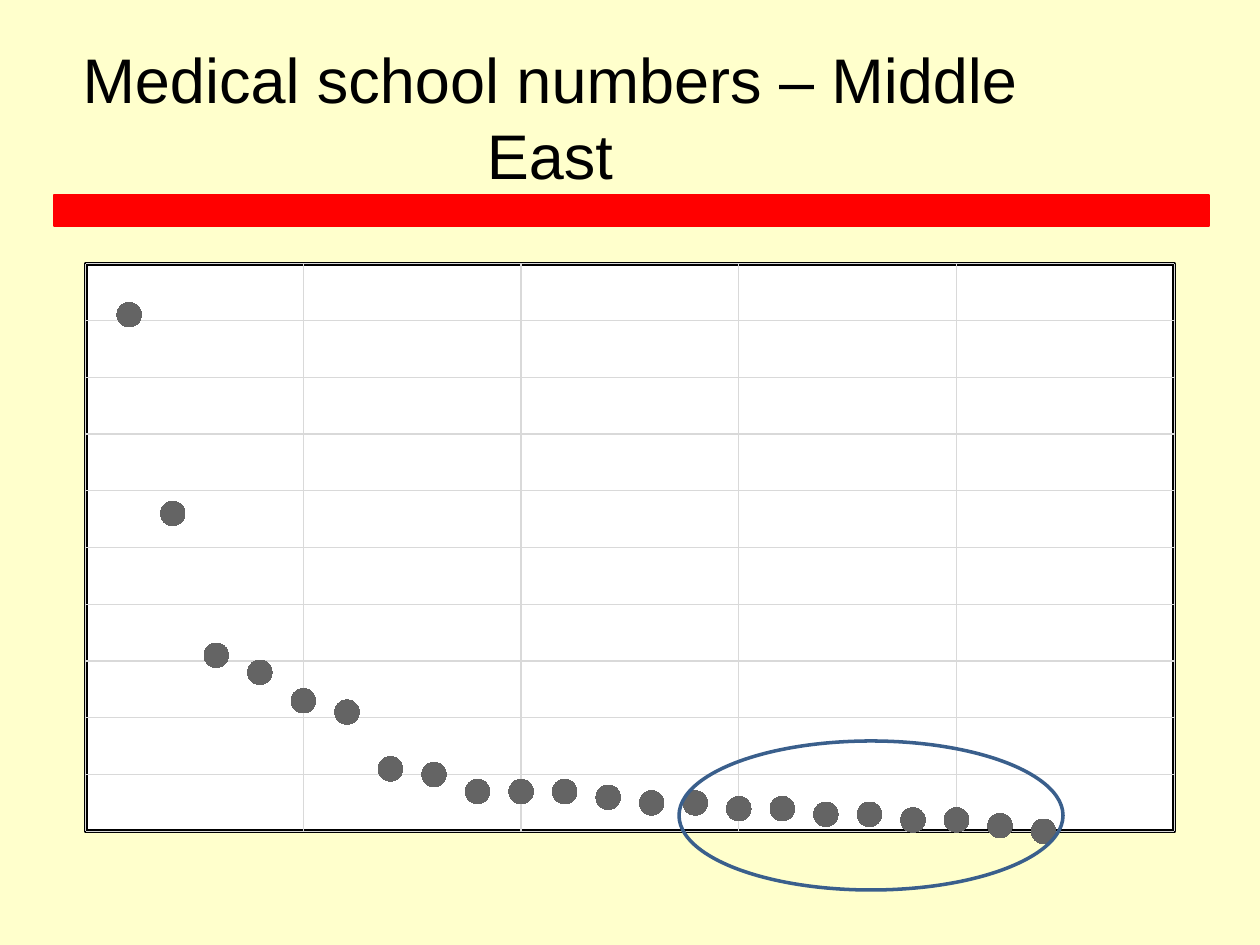
import pptx
import pptx.chart.data
import pptx.dml.color
import pptx.enum.chart
import pptx.enum.shapes
import pptx.enum.text
import pptx.oxml
import pptx.oxml.ns
import pptx.util

PX = 914400 / 126
COLORS = {
    "background": "FFFFCC",
    "rule": "FF0000",
    "text": "000000",
    "plot": "FFFFFF",
    "grid": "D9D9D9",
    "marker": "646464",
    "highlight": "3A5F8C",
}
SCHOOL_COUNTS = [91, 56, 31, 28, 23, 21, 11, 10, 7, 7, 7,
                 6, 5, 5, 4, 4, 3, 3, 2, 2, 1, 0]


def color(name):
    return pptx.dml.color.RGBColor.from_string(COLORS[name])


def px(*lengths):
    return [pptx.util.Emu(round(length * PX)) for length in lengths]


class SlideBuilder:
    """Holds the style and the current slide."""

    title_font = "Arial"
    chart_font = "Calibri"

    def __init__(self, page):
        self.page = page
        page.background.fill.solid()
        page.background.fill.fore_color.rgb = color("background")

    def title(self, text, *place):
        box = self.page.shapes.title
        box.left, box.top, box.width, box.height = px(*place)
        frame = box.text_frame
        frame.text = text
        frame.word_wrap = True
        frame.vertical_anchor = pptx.enum.text.MSO_ANCHOR.MIDDLE
        para = frame.paragraphs[0]
        para.alignment = pptx.enum.text.PP_ALIGN.CENTER
        para.font.name = self.title_font
        para.font.size = pptx.util.Pt(36)
        para.font.color.rgb = color("text")

    def shape(self, kind, line, width, *place, fill=None):
        shape = self.page.shapes.add_shape(kind, *px(*place))
        shape.shadow.inherit = False
        if fill:
            shape.fill.solid()
            shape.fill.fore_color.rgb = color(fill)
        else:
            shape.fill.background()
        shape.line.color.rgb = color(line)
        shape.line.width = pptx.util.Pt(width)

    def scatter(self, name, values, *place):
        data = pptx.chart.data.XyChartData()
        points = data.add_series(name)
        for rank, value in enumerate(values, start=1):
            points.add_data_point(rank, value)
        chart = self.page.shapes.add_chart(
            pptx.enum.chart.XL_CHART_TYPE.XY_SCATTER, *px(*place), data).chart
        chart.has_legend = False
        chart.has_title = False
        chart.font.name = self.chart_font
        chart.font.size = pptx.util.Pt(10)
        chart.font.color.rgb = color("text")
        self.hidden_axis(chart.category_axis, 25, 5)
        self.hidden_axis(chart.value_axis, 100, 10)
        chart.plots[0].vary_by_categories = False

        series = chart.plots[0].series[0]
        series.smooth = False
        series.format.line.fill.background()
        series.marker.style = pptx.enum.chart.XL_MARKER_STYLE.CIRCLE
        series.marker.size = 14
        series.marker.format.fill.solid()
        series.marker.format.fill.fore_color.rgb = color("marker")
        series.marker.format.line.color.rgb = color("marker")
        self.plot_area(chart, x=0.02, y=0.07, w=0.96, h=0.91)

    def hidden_axis(self, axis, maximum, step):
        axis.minimum_scale = 0
        axis.maximum_scale = maximum
        axis.major_unit = step
        axis.has_major_gridlines = True
        line = axis.major_gridlines.format.line
        line.color.rgb = color("grid")
        line.width = pptx.util.Pt(0.75)
        axis.visible = False

    def plot_area(self, chart, **layout):
        """Fix the inner plot area and give it a fill and a double border."""
        area = chart.element.xpath("c:chart/c:plotArea")[0]
        for old in area.xpath("c:layout"):
            area.remove(old)
        spaces = pptx.oxml.ns.nsdecls("c", "a")
        modes = "".join(f'<c:{side}Mode val="edge"/>' for side in "xy")
        sizes = "".join(f'<c:{key} val="{part}"/>' for key, part in layout.items())
        area.insert(0, pptx.oxml.parse_xml(
            f'<c:layout {spaces}><c:manualLayout><c:layoutTarget val="inner"/>'
            f'{modes}{sizes}</c:manualLayout></c:layout>'))
        fill, border = (f'<a:solidFill><a:srgbClr val="{COLORS[name]}"/></a:solidFill>'
                        for name in ("plot", "text"))
        area.append(pptx.oxml.parse_xml(
            f'<c:spPr {spaces}>{fill}<a:ln w="{pptx.util.Pt(2.25)}" cmpd="dbl">'
            f'{border}</a:ln></c:spPr>'))


def main():
    deck = pptx.Presentation()
    deck.slide_width, deck.slide_height = px(1260, 945)
    title_only = deck.slide_layouts[5]
    slide = SlideBuilder(deck.slides.add_slide(title_only))
    shapes = pptx.enum.shapes.MSO_SHAPE
    slide.shape(shapes.RECTANGLE, "rule", 1, 54, 195, 1155, 31, fill="rule")
    slide.title("Medical school numbers – Middle East", 63, 38, 974, 157)
    slide.scatter("Series 1", SCHOOL_COUNTS, 63, 220, 1134, 624)
    slide.shape(shapes.OVAL, "highlight", 2, 679, 741, 384, 149)
    deck.save("out.pptx")


if __name__ == "__main__":
    main()
